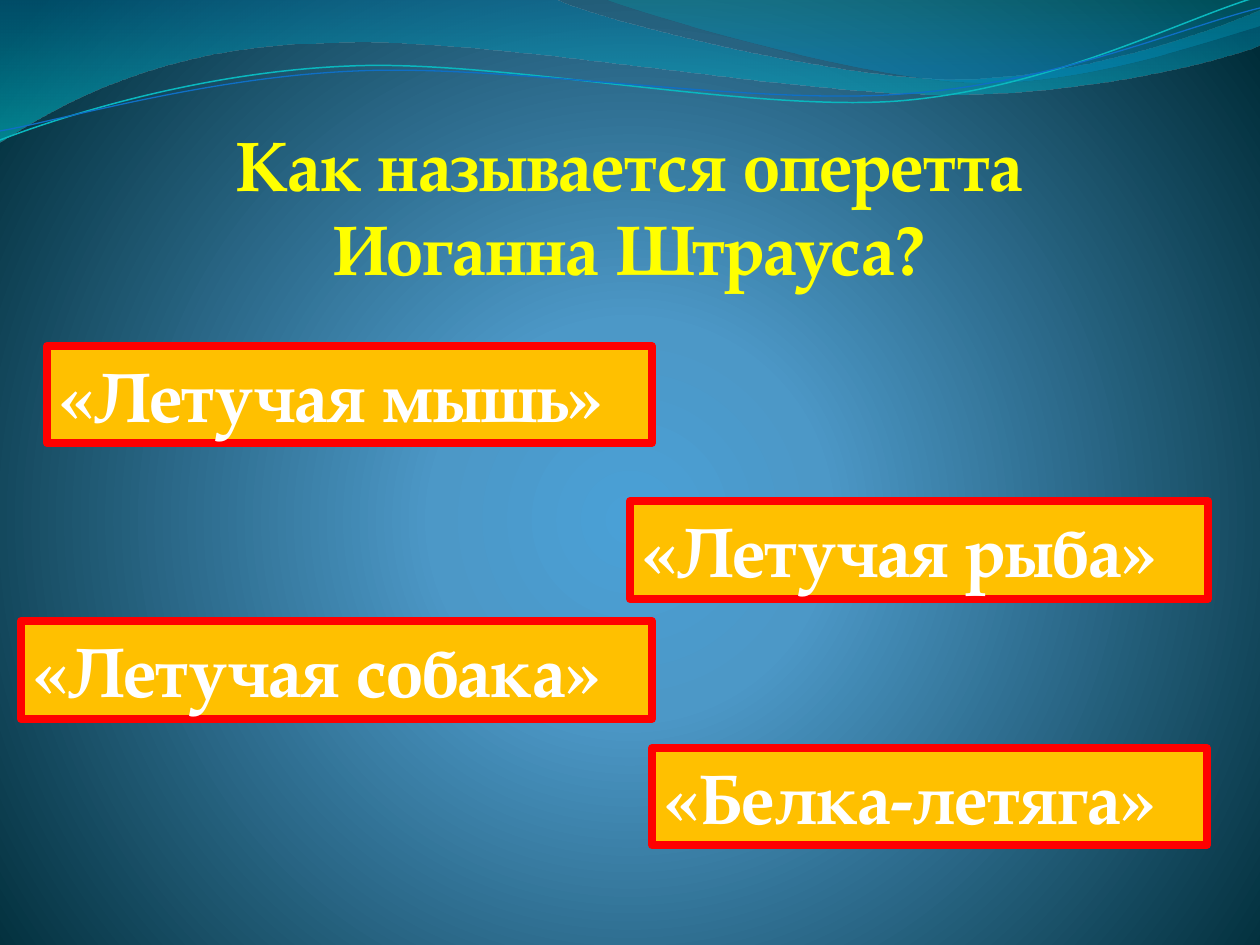
from dataclasses import dataclass
from lxml.etree import SubElement
from pptx import Presentation
from pptx.dml.color import RGBColor
from pptx.enum.shapes import MSO_SHAPE
from pptx.enum.text import MSO_ANCHOR, MSO_AUTO_SIZE, PP_ALIGN
from pptx.oxml.ns import qn
from pptx.util import Pt

SCALE = 914400 / 126  # EMU per px


@dataclass(frozen=True)
class Theme:
    font: str = "TeX Gyre Pagella"
    size: int = 40
    title: str = "FFFF00"
    text: str = "FFFFFF"
    box: str = "FFC000"
    edge: str = "FF0000"
    edge_pt: float = 4.5
    back: tuple = ((0, "4AA0D6", 100), (25, "4C98C7", 100), (100, "002C38", 100))
    wide: tuple = ((0, "0074A1", 45), (100, "00C6CF", 55))
    slim: tuple = ((0, "00A1A9", 30), (80, "008BBF", 45))
    teal: str = "0AB8BF"
    blue: str = "0F6FC6"


THEME = Theme()

# Outlines: each step lists its points, one for a line, three for a Bezier
WIDE = [[(0, 0)], [(554, -1)],
        [(600, 21), (837, 79), (955, 79)],
        [(1075, 79), (1207, 33), (1260, 11)],
        [(1261, 45)],
        [(1239, 55), (1096, 96), (940, 94)],
        [(784, 94), (481, 35), (324, 43)],
        [(163, 45), (58, 105), (-1, 142)],
        [(0, 0)]]
SLIM = [[(604, -1)],
        [(641, 14), (859, 78), (969, 82)],
        [(1079, 87), (1211, 40), (1260, 26)],
        [(1260, 0)], [(604, -1)]]
UPPER = [[(0, 140)],
         [(60, 117), (199, 72), (349, 66)],
         [(498, 59), (747, 112), (898, 101)],
         [(1050, 89), (1182, 19), (1257, -3)]]
LOWER = [[(0, 131)],
         [(59, 121), (207, 77), (357, 71)],
         [(508, 64), (752, 106), (903, 94)],
         [(1053, 84), (1186, 26), (1260, 8)]]

ANSWERS = [("«Летучая мышь»", (47, 346, 605, 97)),
           ("«Летучая собака»", (21, 621, 631, 98)),
           ("«Летучая рыба»", (630, 501, 578, 98)),
           ("«Белка-летяга»", (652, 748, 555, 97))]


def px(n):
    return round(n * SCALE)


def color(code):
    return RGBColor.from_string(code)


def blend(fill, host, stops, center=None):
    """Gradient with optional transparency: downward, or round a center."""
    fill.gradient()
    grad = host.find(".//" + qn("a:gradFill"))
    for child in list(grad):
        grad.remove(child)
    items = SubElement(grad, qn("a:gsLst"))
    for pos, code, alpha in stops:
        stop = SubElement(items, qn("a:gs"), pos=str(pos * 1000))
        tint = SubElement(stop, qn("a:srgbClr"), val=code)
        if alpha < 100:
            SubElement(tint, qn("a:alpha"), val=str(alpha * 1000))
    if center:
        ring = SubElement(grad, qn("a:path"))
        ring.set("path", "circle")
        SubElement(ring, qn("a:fillToRect"),
                   {side: str(n * 1000) for side, n in zip("ltrb", center)})
    else:
        SubElement(grad, qn("a:lin"), ang="5400000", scaled="0")


def outline(slide, box, steps, close):
    """Freeform through the step ends, with Bezier steps made curved."""
    left, top = box[:2]
    spots = [[(px(left + x), px(top + y)) for x, y in step] for step in steps]
    ends = [step[-1] for step in spots]
    pen = slide.shapes.build_freeform(*ends[0], scale=1.0)
    pen.add_line_segments(ends[1:], close=close)
    shape = pen.convert_to_shape()
    shape.shadow.inherit = False
    lines = list(shape.element.iter(qn("a:lnTo")))
    for line, step in zip(lines, spots[1:]):
        if len(step) == 3:
            curve = line.getparent().makeelement(qn("a:cubicBezTo"))
            for x, y in step:
                SubElement(curve, qn("a:pt"),
                           x=str(x - shape.left), y=str(y - shape.top))
            line.getparent().replace(line, curve)
    return shape


def add_waves(slide, box):
    # Translucent bands
    for steps, stops in ((WIDE, THEME.wide), (SLIM, THEME.slim)):
        band = outline(slide, box, steps, True)
        blend(band.fill, band.element.spPr, stops)
        band.line.fill.background()
    # Thin curves
    for steps, code, width in ((UPPER, THEME.teal, 0.85), (LOWER, THEME.blue, 0.75)):
        curve = outline(slide, box, steps, False)
        curve.fill.background()
        curve.line.color.rgb = color(code)
        curve.line.width = Pt(width)


def write(shape, text, code, align):
    frame = shape.text_frame
    frame.text = text
    frame.word_wrap = True
    frame.auto_size = MSO_AUTO_SIZE.NONE
    frame.vertical_anchor = MSO_ANCHOR.TOP
    para = frame.paragraphs[0]
    para.alignment = align
    font = para.font
    font.name, font.size, font.bold = THEME.font, Pt(THEME.size), True
    font.color.rgb = color(code)


def add_title(slide, box):
    title = slide.shapes.title
    title.left, title.top, title.width, title.height = map(px, box)
    write(title, "Как называется оперетта Иоганна Штрауса?",
          THEME.title, PP_ALIGN.CENTER)


def add_answer(slide, box, text):
    card = slide.shapes.add_shape(MSO_SHAPE.RECTANGLE, *map(px, box))
    card.shadow.inherit = False
    card.fill.solid()
    card.fill.fore_color.rgb = color(THEME.box)
    card.line.color.rgb = color(THEME.edge)
    card.line.width = Pt(THEME.edge_pt)
    SubElement(card.element.spPr.find(qn("a:ln")), qn("a:round"))
    write(card, text, THEME.text, PP_ALIGN.LEFT)


def main():
    deck = Presentation()
    deck.slide_width, deck.slide_height = px(1260), px(945)
    slide = deck.slides.add_slide(deck.slide_layouts[5])
    blend(slide.background.fill, slide.element, THEME.back, (10, 110, 10, 100))
    add_waves(slide, (0, 0, 1260, 142))
    add_title(slide, (143, 115, 973, 344))
    for text, box in ANSWERS:
        add_answer(slide, box, text)
    deck.save("out.pptx")


if __name__ == "__main__":
    main()
